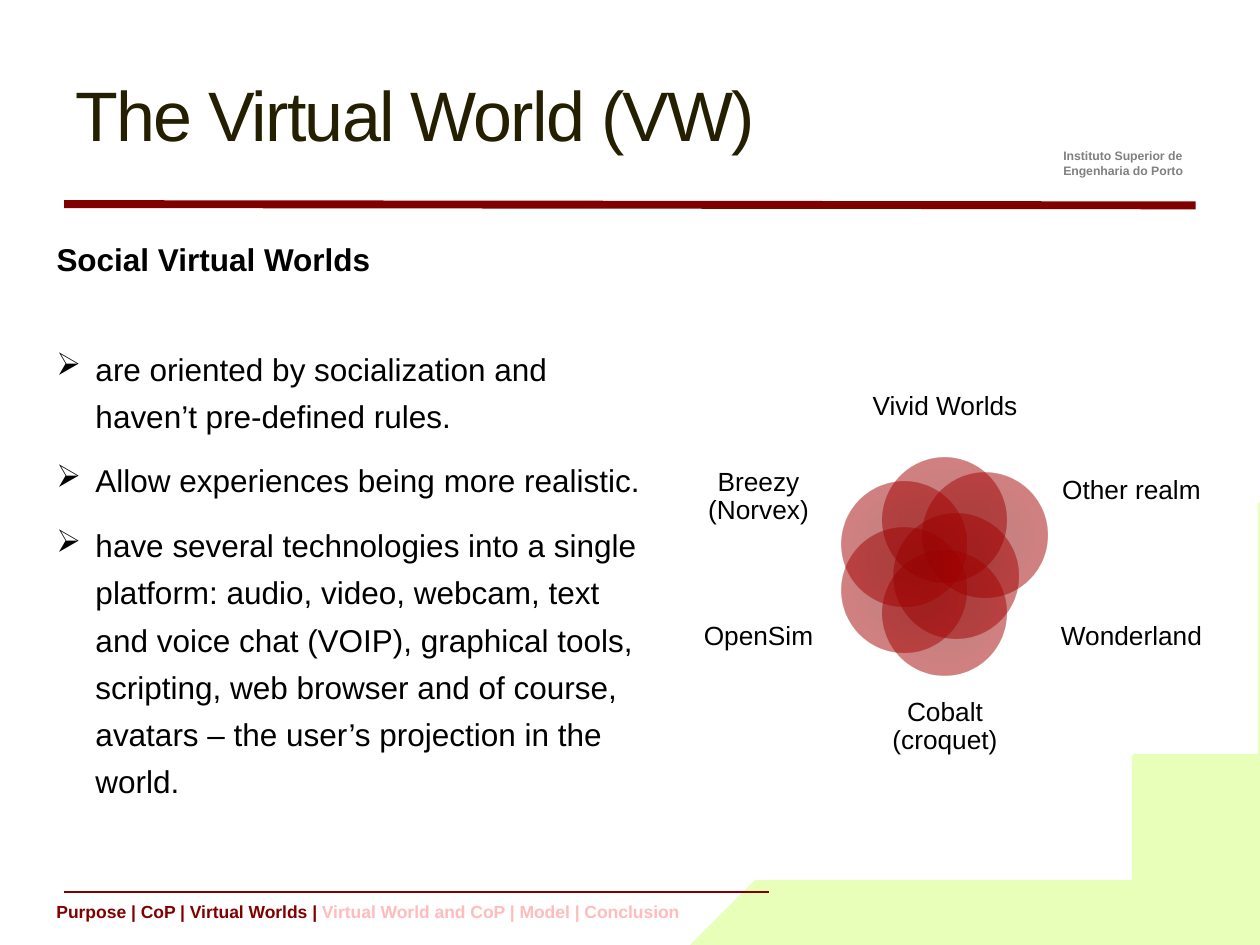
from typing import NamedTuple

from lxml import etree
from pptx import Presentation
from pptx.dml.color import RGBColor
from pptx.enum.shapes import MSO_CONNECTOR, MSO_SHAPE
from pptx.enum.text import MSO_ANCHOR, PP_ALIGN
from pptx.oxml import parse_xml
from pptx.oxml.ns import nsdecls, qn
from pptx.util import Inches, Pt

FONT = "Arial"
BLACK = RGBColor(0x00, 0x00, 0x00)
OLIVE = RGBColor(0x24, 0x1F, 0x00)
GREY = RGBColor(0x80, 0x80, 0x80)
MAROON = RGBColor(0x80, 0x00, 0x00)
PINK = RGBColor(0xFF, 0xBC, 0xBC)
LIME = RGBColor(0xE8, 0xFF, 0xB9)

CIRCLE_SIZE = 0.99
GRADIENT_STOPS = [(0, "950000"), (34, "950000"), (70, "A60000"), (100, "AE0000")]
HANGING = 0.31

# Edge of the corner wave, from the right side down to the bottom
WAVE_EDGE = [
    (10, 4.14), (9.96, 4.37), (9.91, 4.59), (9.87, 4.8), (9.82, 5), (9.77, 5.19),
    (9.72, 5.36), (9.66, 5.53), (9.59, 5.69), (9.52, 5.84), (9.45, 5.98),
    (9.37, 6.11), (9.28, 6.24), (9.18, 6.35), (9.07, 6.46), (8.96, 6.56),
    (8.84, 6.66), (8.7, 6.75), (8.56, 6.83), (8.41, 6.91), (8.24, 6.98),
    (8.07, 7.04), (7.88, 7.1), (7.67, 7.16), (7.46, 7.21), (7.22, 7.26),
    (6.98, 7.3), (6.72, 7.34), (6.44, 7.38), (6.14, 7.41), (5.83, 7.44),
    (5.51, 7.47), (5.16, 7.5),
]

BULLETS = [
    "are oriented by socialization and haven’t pre-defined rules.",
    "Allow experiences being more realistic.",
    "have several technologies into a single platform: audio, video, webcam, "
    "text and voice chat (VOIP), graphical tools, scripting, web browser and "
    "of course, avatars – the user’s projection in the world.",
]


class Box(NamedTuple):
    left: float
    top: float
    width: float
    height: float


class World(NamedTuple):
    name: str
    circle_left: float
    circle_top: float
    label: Box


WORLDS = [
    World("Vivid Worlds", 7, 3.63, Box(6.64, 2.89, 1.72, 0.68)),
    World("Other realm", 7.32, 3.75, Box(8.39, 3.53, 1.18, 0.74)),
    World("Wonderland", 7.09, 4.08, Box(8.39, 4.64, 1.18, 0.83)),
    World("Cobalt (croquet)", 7, 4.37, Box(6.88, 5.43, 1.24, 0.68)),
    World("OpenSim", 6.68, 4.19, Box(5.43, 4.64, 1.18, 0.83)),
    World("Breezy (Norvex)", 6.68, 3.82, Box(5.43, 3.53, 1.18, 0.83)),
]


def set_font(font, size: float, color: RGBColor, bold: bool = False) -> None:
    font.name = FONT
    font.size = Pt(size)
    font.bold = bold
    font.color.rgb = color


def add_text(slide, box: Box, text: str, size: float, color: RGBColor = BLACK,
             bold: bool = False, wrap: bool = True):
    shape = slide.shapes.add_textbox(*map(Inches, box))
    frame = shape.text_frame
    frame.word_wrap = wrap
    paragraph = frame.paragraphs[0]
    paragraph.text = text
    set_font(paragraph.font, size, color, bold)
    return frame


def add_rule(slide, start: tuple[float, float], end: tuple[float, float],
             width: float) -> None:
    line = slide.shapes.add_connector(MSO_CONNECTOR.STRAIGHT, *map(Inches, start + end))
    line.line.color.rgb = MAROON
    line.line.width = Pt(width)
    etree.SubElement(line._element.spPr, qn("a:effectLst"))


def add_wave(slide) -> None:
    builder = slide.shapes.build_freeform(5.16, 7.5, scale=Inches(1))
    builder.add_line_segments([(10, 7.5)] + WAVE_EDGE, close=True)
    wave = builder.convert_to_shape()
    wave.shadow.inherit = False
    wave.fill.solid()
    wave.fill.fore_color.rgb = LIME
    wave.line.color.rgb = LIME
    wave.line.width = Pt(2.25)


def add_bullets(slide, box: Box) -> None:
    frame = slide.shapes.add_textbox(*map(Inches, box)).text_frame
    frame.word_wrap = True
    for index, text in enumerate(BULLETS):
        paragraph = frame.add_paragraph() if index else frame.paragraphs[0]
        paragraph.text = text
        paragraph.line_spacing = 1.25
        if index:
            paragraph.space_before = Pt(10)
        properties = paragraph._p.get_or_add_pPr()
        properties.set("marL", str(Inches(HANGING)))
        properties.set("indent", str(-Inches(HANGING)))
        etree.SubElement(properties, qn("a:buChar"), char="➢")
        set_font(paragraph.font, 18, BLACK)


def add_world(slide, world: World) -> None:
    circle = slide.shapes.add_shape(
        MSO_SHAPE.OVAL, Inches(world.circle_left), Inches(world.circle_top),
        Inches(CIRCLE_SIZE), Inches(CIRCLE_SIZE))
    circle.shadow.inherit = False
    circle.line.fill.background()
    # Half-transparent radial gradient
    stops = "".join(
        f'<a:gs pos="{position * 1000}"><a:srgbClr val="{color}">'
        '<a:alpha val="50000"/></a:srgbClr></a:gs>'
        for position, color in GRADIENT_STOPS)
    gradient = parse_xml(
        f'<a:gradFill {nsdecls("a")} rotWithShape="1"><a:gsLst>{stops}</a:gsLst>'
        '<a:path path="circle"><a:fillToRect l="100000" t="100000" r="100000" '
        'b="100000"/></a:path></a:gradFill>')
    circle._element.spPr.find(qn("a:prstGeom")).addnext(gradient)

    frame = add_text(slide, world.label, world.name, 15)
    frame.margin_left = frame.margin_right = 0
    frame.margin_top = frame.margin_bottom = 0
    frame.vertical_anchor = MSO_ANCHOR.MIDDLE
    frame.paragraphs[0].alignment = PP_ALIGN.CENTER
    frame.paragraphs[0].line_spacing = 0.9


def add_footer(slide, box: Box) -> None:
    frame = add_text(slide, box, "Purpose | CoP | Virtual Worlds |", 10, MAROON, True)
    upcoming = frame.paragraphs[0].add_run()
    upcoming.text = " Virtual World and CoP | Model | Conclusion"
    upcoming.font.color.rgb = PINK


def main() -> None:
    presentation = Presentation()
    presentation.slide_width = Inches(10)
    presentation.slide_height = Inches(7.5)
    slide = presentation.slides.add_slide(presentation.slide_layouts[6])

    # Background, rules and institution
    add_wave(slide)
    add_rule(slide, (0.51, 1.62), (9.49, 1.63), 4.5)
    add_text(slide, Box(8.34, 1.13, 1.42, 0.34),
             "Instituto Superior de Engenharia do Porto", 7, GREY, True)
    add_rule(slide, (0.51, 7.08), (6.1, 7.08), 1.5)

    # Title
    title = add_text(slide, Box(0.5, 0.36, 9, 1.08), "The Virtual World (VW)", 40, OLIVE)
    title.vertical_anchor = MSO_ANCHOR.MIDDLE
    title.paragraphs[0].runs[0].font._element.set("spc", "-100")

    # Body
    add_text(slide, Box(0.35, 1.86, 2.72, 0.4), "Social Virtual Worlds", 18,
             bold=True, wrap=False)
    add_bullets(slide, Box(0.35, 2.65, 4.96, 4.01))

    # Overlapping circles with their labels
    for world in WORLDS:
        add_world(slide, world)

    add_footer(slide, Box(0.35, 7.1, 8.43, 0.44))
    presentation.save("out.pptx")


if __name__ == "__main__":
    main()
